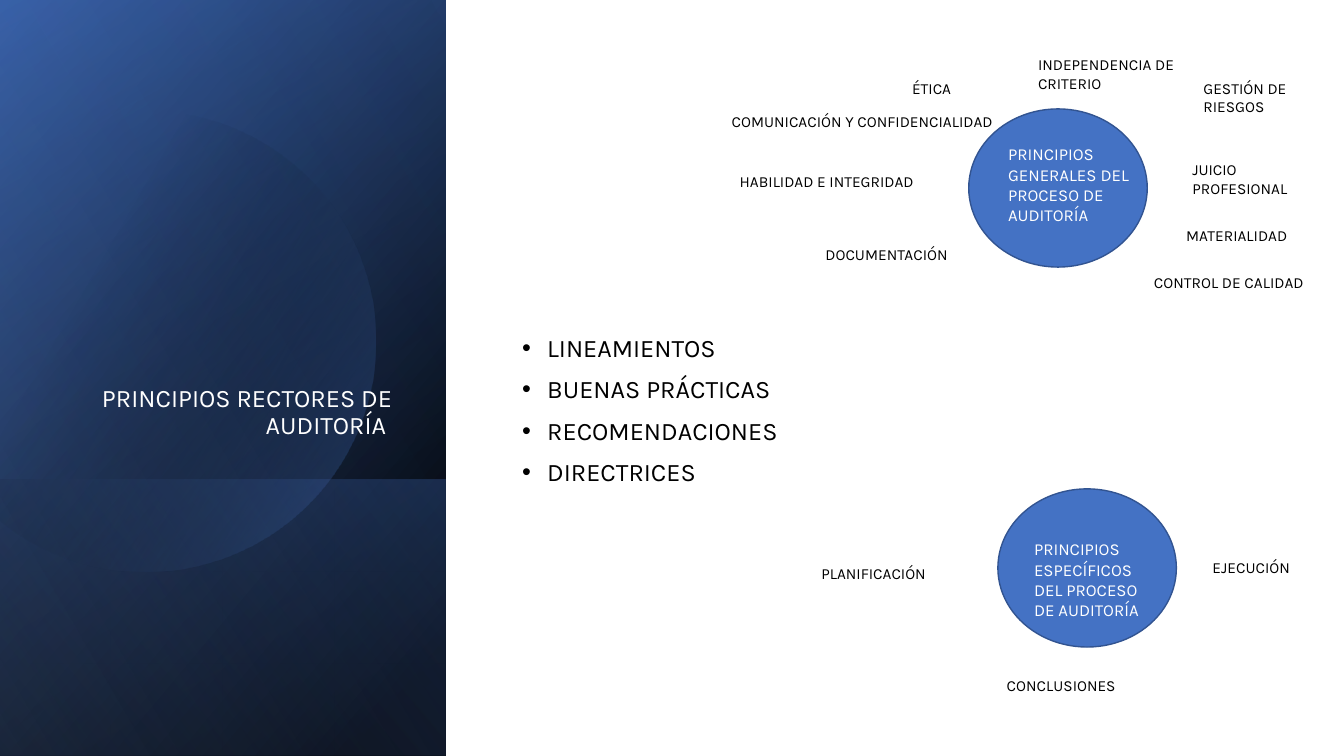
import math

import pptx
import pptx.dml.color
import pptx.enum.shapes
import pptx.enum.text
import pptx.oxml.ns
import pptx.util
from lxml import etree

Pt = pptx.util.Pt
SHAPES = pptx.enum.shapes.MSO_SHAPE
ANCHOR = pptx.enum.text.MSO_ANCHOR
ALIGN = pptx.enum.text.PP_ALIGN
FONT = "Karla"
WHITE, BLACK, BLUE, EDGE = "FFFFFF", "000000", "4472C4", "325491"

PANEL = (0, 0, 318.5, 540)
TITLE = (63.4, 36, 223.9, 282.2)
GUIDANCE = (365.8, 99.4, 259.2, 388.8)
GUIDANCE_ITEMS = ["LINEAMIENTOS", "BUENAS PRÁCTICAS", "RECOMENDACIONES", "DIRECTRICES"]
GENERAL = {
    "box": (692, 77.8, 127.5, 113),
    "heading": ("PRINCIPIOS GENERALES DEL PROCESO DE AUDITORÍA", 21, 21.6, 103.7),
    "principles": [
        ("ÉTICA", -47.6, -25.2, 60),
        ("COMUNICACIÓN Y CONFIDENCIALIDAD", -176.5, -1.5, 209.5),
        ("HABILIDAD E INTEGRIDAD", -170.7, 41.7, 175),
        ("INDEPENDENCIA DE CRITERIO", 42.4, -41.8, 152),
        ("GESTIÓN DE RIESGOS", 160.5, -25.2, 95),
        ("DOCUMENTACIÓN", -109.5, 93.6, 115),
        ("JUICIO PROFESIONAL", 152.6, 33.1, 115),
        ("MATERIALIDAD", 148.2, 79.9, 104),
        ("CONTROL DE CALIDAD", 125.2, 113.7, 140),
    ],
}
SPECIFIC = {
    "box": (712.8, 349.2, 127.5, 113),
    "heading": ("PRINCIPIOS ESPECÍFICOS DEL PROCESO DE AUDITORÍA", 18.7, 32.4, 95),
    "principles": [
        ("PLANIFICACIÓN", -133.2, 50.4, 104),
        ("CONCLUSIONES", -0.8, 130.3, 129),
        ("EJECUCIÓN", 146.2, 46.1, 100),
    ],
}


def color(hex_code):
    """Return the colour for a hex string."""
    return pptx.dml.color.RGBColor.from_string(hex_code)


def set_all(target, **values):
    """Set each given attribute on the target."""
    for name, value in values.items():
        setattr(target, name, value)


def lengths(box):
    """Turn a box of points into lengths."""
    return [Pt(value) for value in box]


def write(paragraph, text, size, hex_code):
    """Put one formatted run in a paragraph."""
    run = paragraph.add_run()
    run.text = text
    set_all(run.font, name=FONT, size=Pt(size))
    run.font.color.rgb = color(hex_code)


def add_label(slide, box, text, size, hex_code):
    """Add a wrapped text box with one paragraph."""
    frame = slide.shapes.add_textbox(*lengths(box)).text_frame
    frame.word_wrap = True
    write(frame.paragraphs[0], text, size, hex_code)


def fade(shape, stops, angle):
    """Fill a shape with a two-colour gradient of position, colour and opacity."""
    shape.shadow.inherit = False
    shape.fill.gradient()
    shape.fill.gradient_angle = 360 - angle
    for stop, (position, hex_code, _) in zip(shape.fill.gradient_stops, stops):
        stop.position = position / 100
        stop.color.rgb = color(hex_code)
    tints = list(shape._element.spPr.iter(pptx.oxml.ns.qn("a:srgbClr")))
    for tint, (_, _, opacity) in zip(tints, stops):
        etree.SubElement(tint, pptx.oxml.ns.qn("a:alpha"), val=str(opacity * 1000))
    shape.line.fill.background()


def add_disc(slide, box):
    """Add the large circle, cut off at the left edge of the panel."""
    left, top, _, _ = box
    radius, center_x, center_y = 164.5, 103.7, 243.5
    limit = math.acos(-center_x / radius)
    angles = [limit * step / 60 for step in range(-60, 61)]
    points = [
        (Pt(left + center_x + radius * math.cos(a)), Pt(top + center_y + radius * math.sin(a)))
        for a in angles
    ]
    outline = slide.shapes.build_freeform(*points[0])
    outline.add_line_segments(points[1:])
    fade(outline.convert_to_shape(), [(29, BLACK, 0), (100, BLUE, 43)], 30)


def add_panel(slide, box):
    """Layer the gradients of the dark side panel."""
    left, top, width, height = box
    strip_height = 197.5
    strip = (left, top + height - strip_height, width, strip_height)
    layers = [
        (box, [(8, BLACK, 100), (100, "2F5597", 100)], 220),
        (box, [(0, BLACK, 0), (99, BLUE, 46)], 240),
        (strip, [(2, BLUE, 29), (100, BLACK, 30)], 140),
        None,
        (box, [(0, BLACK, 0), (99, "8FAADC", 11)], 150),
    ]
    for layer in layers:
        if layer is None:
            add_disc(slide, box)
            continue
        area, stops, angle = layer
        fade(slide.shapes.add_shape(SHAPES.RECTANGLE, *lengths(area)), stops, angle)


def add_title(slide, box, text):
    """Place the slide title on the panel, above everything drawn so far."""
    title = slide.shapes.title
    slide.shapes._spTree.append(title._element)
    set_all(title, **dict(zip(("left", "top", "width", "height"), lengths(box))))
    set_all(title.text_frame, word_wrap=True, vertical_anchor=ANCHOR.BOTTOM,
            auto_size=pptx.enum.text.MSO_AUTO_SIZE.NONE)
    paragraph = title.text_frame.paragraphs[0]
    set_all(paragraph, alignment=ALIGN.RIGHT, line_spacing=0.9)
    write(paragraph, text, 18, WHITE)


def add_guidance(slide, box, items):
    """Add the bulleted list, centred vertically in its box."""
    frame = slide.shapes.add_textbox(*lengths(box)).text_frame
    set_all(frame, word_wrap=True, vertical_anchor=ANCHOR.MIDDLE)
    for index, item in enumerate(items):
        paragraph = frame.add_paragraph() if index else frame.paragraphs[0]
        set_all(paragraph, line_spacing=0.9, space_before=Pt(10))
        properties = paragraph._p.get_or_add_pPr()
        properties.set("marL", str(Pt(18)))
        properties.set("indent", str(-Pt(18)))
        etree.SubElement(properties, pptx.oxml.ns.qn("a:buFont"), typeface="Arial")
        etree.SubElement(properties, pptx.oxml.ns.qn("a:buChar"), char="•")
        write(paragraph, item, 18, BLACK)


def add_cluster(slide, box, heading, principles):
    """Add a circle with its heading and the principles around it."""
    left, top, _, _ = box
    circle = slide.shapes.add_shape(SHAPES.OVAL, *lengths(box))
    circle.shadow.inherit = False
    circle.fill.solid()
    circle.fill.fore_color.rgb = color(BLUE)
    circle.line.color.rgb = color(EDGE)
    circle.line.width = Pt(1)
    labels = [(heading, 66, 12, WHITE)] + [(item, 21, 11, BLACK) for item in principles]
    for (text, right, down, width), height, size, hex_code in labels:
        add_label(slide, (left + right, top + down, width, height), text, size, hex_code)


def main():
    """Build and save the slide."""
    deck = pptx.Presentation()
    set_all(deck, slide_width=Pt(960), slide_height=Pt(540))
    slide = deck.slides.add_slide(deck.slide_layouts[5])
    add_panel(slide, PANEL)
    add_title(slide, TITLE, "PRINCIPIOS RECTORES DE AUDITORÍA ")
    add_guidance(slide, GUIDANCE, GUIDANCE_ITEMS)
    for cluster in (GENERAL, SPECIFIC):
        add_cluster(slide, **cluster)
    deck.save("out.pptx")


if __name__ == "__main__":
    main()
